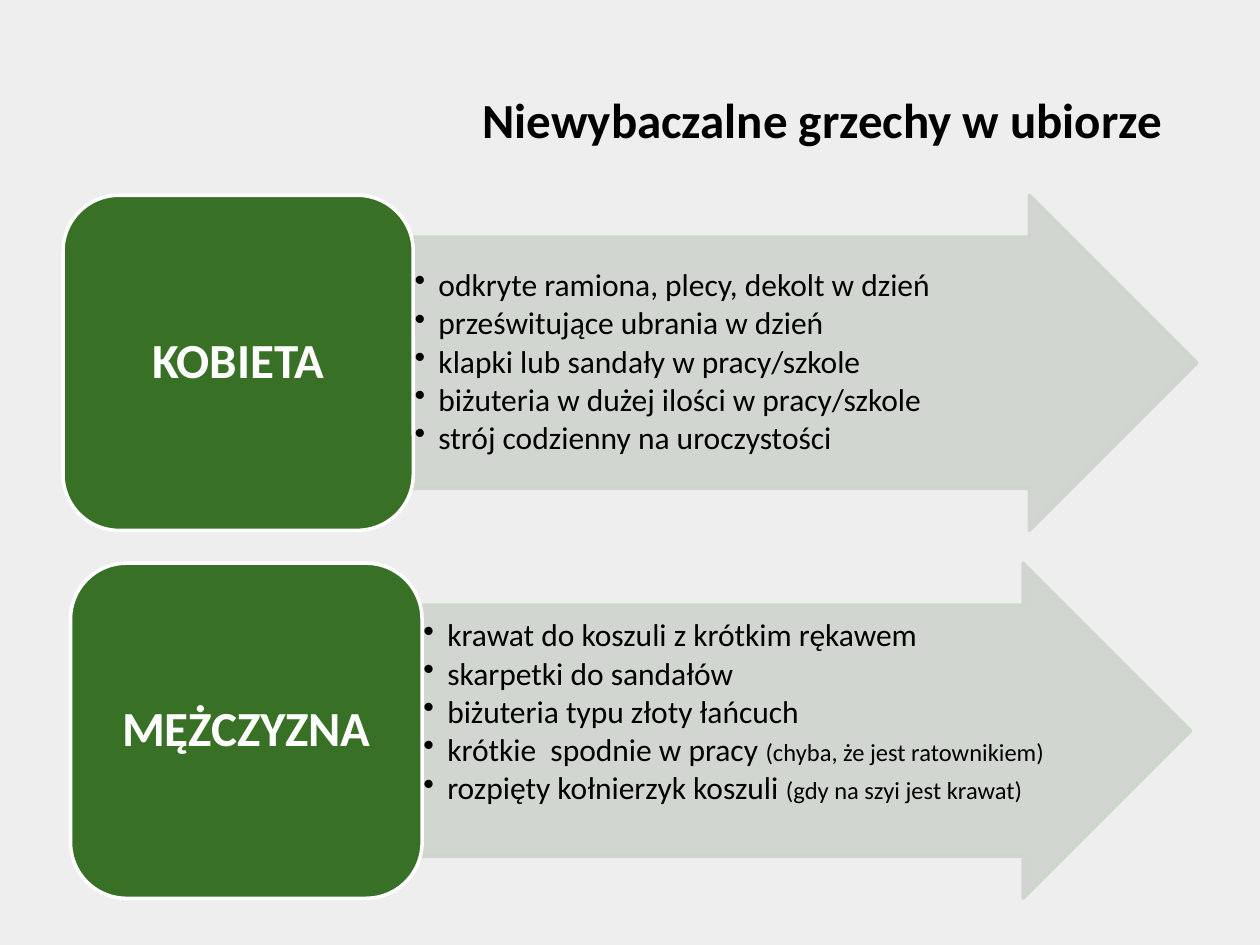
"""Build a slide that lists unforgivable dress mistakes for women and men."""
from lxml.etree import SubElement
from pptx import Presentation
from pptx.dml.color import RGBColor
from pptx.enum.shapes import MSO_SHAPE as Shape
from pptx.enum.text import MSO_ANCHOR as Anchor, PP_ALIGN as Align
from pptx.oxml.ns import qn
from pptx.util import Inches, Pt

TITLE = "Niewybaczalne grzechy w ubiorze"
ROWS = [
    {
        "label": "KOBIETA", "left": 0.5, "split": 3.28, "right": 9.5, "lift": 0,
        "points": [
            ("odkryte ramiona, plecy, dekolt w dzień", ""),
            ("prześwitujące ubrania w dzień", ""),
            ("klapki lub sandały w pracy/szkole", ""),
            ("biżuteria w dużej ilości w pracy/szkole", ""),
            ("strój codzienny na uroczystości", ""),
        ],
    },
    {
        "label": "MĘŻCZYZNA", "left": 0.56, "split": 3.35, "right": 9.45, "lift": 0.28,
        "points": [
            ("krawat do koszuli z krótkim rękawem", ""),
            ("skarpetki do sandałów", ""),
            ("biżuteria typu złoty łańcuch", ""),
            ("krótkie  spodnie w pracy ", "(chyba, że jest ratownikiem)"),
            ("rozpięty kołnierzyk koszuli ", "(gdy na szyi jest krawat)"),
        ],
    },
]
FIRST_TOP, ROW_HEIGHT, ROW_GAP = 1.55, 2.66, 0.26
INDENT = Inches(0.19)
HEADING = {"size": Pt(28), "bold": True}
POINT, ASIDE = {"size": Pt(18)}, {"size": Pt(14)}


def color(value):
    return RGBColor.from_string(value)


def set_all(target, values):
    for name, value in values.items():
        setattr(target, name, value)


def add_span(para, text, values, ink):
    span = para.add_run()
    span.text = text
    set_all(span.font, {"name": "Calibri", **values})
    span.font.color.rgb = color(ink)


def add_block(page, kind, left, top, right, fill, line):
    block = page.shapes.add_shape(kind, Inches(left), Inches(top),
                                  Inches(right - left), Inches(ROW_HEIGHT))
    block.shadow.inherit = False
    block.fill.solid()
    block.fill.fore_color.rgb = color(fill)
    block.line.color.rgb = color(line)
    block.line.width = Pt(2)
    return block


def set_opacity(block, percent):
    for tint in block.element.spPr.iter(qn("a:srgbClr")):
        SubElement(tint, qn("a:alpha")).set("val", str(percent * 1000))


def add_bullet(para):
    props = para._p.get_or_add_pPr()
    props.set("marL", str(INDENT))
    props.set("indent", str(-INDENT))
    SubElement(props, qn("a:buChar")).set("char", "•")


def add_points(arrow, points, lift):
    frame = arrow.text_frame
    edge = Inches(0.01)
    set_all(frame, {"word_wrap": True, "vertical_anchor": Anchor.MIDDLE,
                    "margin_left": edge, "margin_right": edge,
                    "margin_top": edge, "margin_bottom": Inches(0.01 + lift)})
    for index, (text, aside) in enumerate(points):
        para = frame.add_paragraph() if index else frame.paragraphs[0]
        add_bullet(para)
        set_all(para, {"alignment": Align.LEFT, "line_spacing": 0.9, "space_after": Pt(2.4)})
        add_span(para, text, POINT, "000000")
        if aside:
            add_span(para, aside, ASIDE, "000000")


def add_row(page, row, top):
    arrow = add_block(page, Shape.RIGHT_ARROW, row["split"], top, row["right"],
                      "CED5CD", "CED5CD")
    arrow.adjustments[0] = 0.75
    set_opacity(arrow, 90)
    add_points(arrow, row["points"], row["lift"])
    box = add_block(page, Shape.ROUNDED_RECTANGLE, row["left"], top, row["split"],
                    "387025", "FFFFFF")
    set_all(box.text_frame, {"word_wrap": True, "vertical_anchor": Anchor.MIDDLE})
    para = box.text_frame.paragraphs[0]
    set_all(para, {"alignment": Align.CENTER, "line_spacing": 0.9})
    add_span(para, row["label"], HEADING, "FFFFFF")


def add_title(page):
    title = page.shapes.title
    set_all(title, {"left": Inches(0.5), "top": Inches(0.39),
                    "width": Inches(9), "height": Inches(0.84)})
    set_all(title.text_frame, {"vertical_anchor": Anchor.BOTTOM, "margin_right": Inches(0.28)})
    para = title.text_frame.paragraphs[0]
    para.alignment = Align.RIGHT
    add_span(para, TITLE, HEADING, "000000")


def main():
    deck = Presentation()
    set_all(deck, {"slide_width": Inches(10), "slide_height": Inches(7.5)})
    page = deck.slides.add_slide(deck.slide_layouts[5])
    page.background.fill.solid()
    page.background.fill.fore_color.rgb = color("EEEEEE")
    add_title(page)
    for index, row in enumerate(ROWS):
        add_row(page, row, FIRST_TOP + index * (ROW_HEIGHT + ROW_GAP))
    deck.save("out.pptx")


if __name__ == "__main__":
    main()
